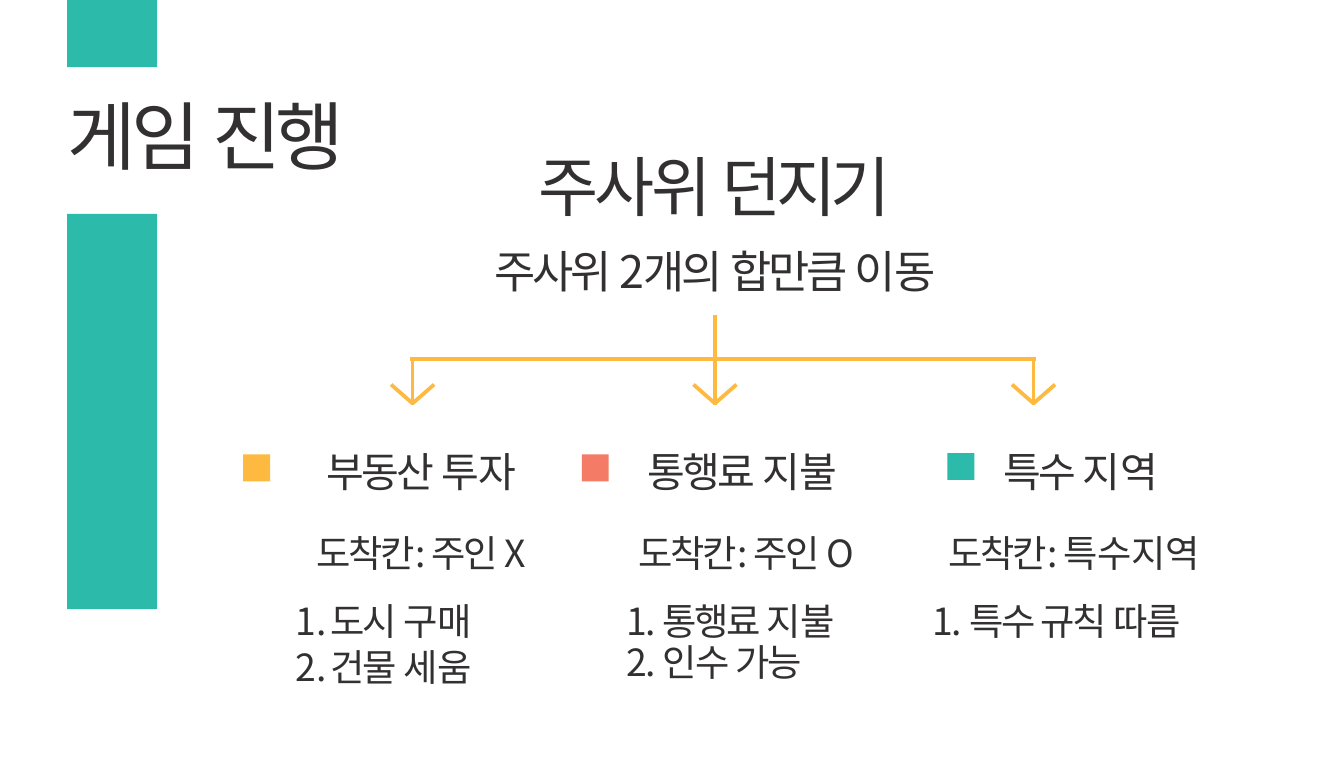
import pptx
import pptx.util
import pptx.dml.color
import pptx.enum.shapes
import pptx.enum.text
import pptx.oxml
import pptx.oxml.ns
from lxml import etree

Inches, Pt = pptx.util.Inches, pptx.util.Pt
ALIGN = pptx.enum.text.PP_ALIGN
FONT = "Noto Sans CJK KR"
TEAL, CORAL, GOLD, INK = "2CBBAB", "F47C67", "FDB940", "323031"

# Content: each run is (text, letter spacing in points)
TITLE = [("게임 ", -2.2), ("진행", -3.4)]
ROLL = [("주사위 ", -2.2), ("던지기", -3)]
MOVE = [("주사위 ", -1.6), ("2개의 ", -1.7), ("합만큼 ", -1.6), ("이동", -0.8)]
BUY_OUT = [("2. ", -0.8), ("인수 ", -1.1), ("가능", -1.3)]
LAND = ("도착칸: ", -1.3)
OWNER = ("주인 ", -1.1)

# Rows: each cell is (left indent, runs)
HEADS = [
    (0, [("부동산 ", -1.4), ("투자", -0.2)]),
    (0.1, [("통행료 ", -1.4), ("지불", -0.2)]),
    (0.29, [("특수 ", -1.3), ("지역", -0.2)]),
]
CASES = [
    (0, [LAND, OWNER, ("X", -0.5)]),
    (0.16, [LAND, OWNER, ("O", -0.5)]),
    (0.2, [LAND, ("특수지역", -0.2)]),
]
STEPS = [
    [("도시 ", -1.1), ("구매", -0.2)],
    [("건물 ", -1.1), ("세움", -0.2)],
]
RULES = [
    (0.42, [("1. ", -0.8), ("통행료 ", -1.4), ("지불", -0.2)]),
    (0.23, [("1. ", -0.8), ("특수 규칙 ", -1.1), ("따름", -0.5)]),
]
COLS, ROWS = [2.21, 2.47, 2.37], [0.52, 0.55, 0.78]
BARS = [(0.5, 0, 0.67, 0.5, TEAL), (0.5, 1.59, 0.67, 2.94, TEAL)]
MARKS = [(7.05, 3.37, 0.2, 0.2, TEAL), (4.33, 3.38, 0.2, 0.2, CORAL),
         (1.81, 3.38, 0.2, 0.2, GOLD)]
TIPS = [3.07, 5.32, 7.69]


def paint(target, code):
    target.rgb = pptx.dml.color.RGBColor.from_string(code)


def child(parent, tag, **attrs):
    return etree.SubElement(parent, pptx.oxml.ns.qn(tag), attrs)


def write(frame, runs, size=20, align=ALIGN.LEFT, before=0, left=0,
          hang=0, line=None, number=False, color=INK):
    para = frame.paragraphs[0]
    if para.runs:
        para = frame.add_paragraph()
    para.alignment = align
    para.space_before = Pt(before)
    if line:
        para.line_spacing = Pt(line)
    props = para._p.get_or_add_pPr()
    props.set("marL", str(Inches(left)))
    props.set("indent", str(Inches(hang)))
    if number:
        child(props, "a:buFont", typeface="+mj-lt")
        child(props, "a:buAutoNum", type="arabicPeriod")
        tabs = child(props, "a:tabLst")
        child(tabs, "a:tab", pos=str(Inches(left)), algn="l")
    for words, gap in runs:
        run = para.add_run()
        run.text = words
        run.font.size = Pt(size)
        run.font.name = FONT
        paint(run.font.color, color)
        look = run._r.get_or_add_rPr()
        look.set("spc", str(round(gap * 100)))
        child(look, "a:ea", typeface=FONT)


def setup(frame, top):
    frame.word_wrap = True
    frame.auto_size = pptx.enum.text.MSO_AUTO_SIZE.SHAPE_TO_FIT_TEXT
    frame.vertical_anchor = pptx.enum.text.MSO_ANCHOR.TOP
    frame.margin_left = frame.margin_right = frame.margin_bottom = 0
    frame.margin_top = Inches(top)
    return frame


def add_box(x, y, w, h, top):
    box = slide.shapes.add_textbox(*map(Inches, (x, y, w, h)))
    return setup(box.text_frame, top)


def add_block(x, y, w, h, color):
    kind = pptx.enum.shapes.MSO_SHAPE.RECTANGLE
    block = slide.shapes.add_shape(kind, *map(Inches, (x, y, w, h)))
    block.shadow.inherit = False
    block.fill.solid()
    paint(block.fill.fore_color, color)
    block.line.fill.background()


def add_line(*ends):
    kind = pptx.enum.shapes.MSO_CONNECTOR.STRAIGHT
    line = slide.shapes.add_connector(kind, *map(Inches, ends))
    paint(line.line.color, GOLD)
    line.line.width = Pt(2)
    child(line._element.spPr, "a:effectLst")


deck = pptx.Presentation()
deck.slide_width, deck.slide_height = Inches(10), Inches(5.63)
slide = deck.slides.add_slide(deck.slide_layouts[5])

# Title and side bars
title = slide.shapes.title
title.left, title.top = Inches(0.49), Inches(0.66)
title.width, title.height = Inches(3.35), Inches(0.69)
write(setup(title.text_frame, 0.01), TITLE, size=40, before=1, left=0.01)
for bar in BARS:
    add_block(*bar)

# Dice heading
dice = add_box(2.88, 0.88, 4.88, 1.35, 0.21)
write(dice, ROLL, size=35, align=ALIGN.CENTER, before=15.4)
write(dice, MOVE, size=24, align=ALIGN.CENTER, before=9.9)

# Second step of the toll column
write(add_box(4.65, 4.74, 1.4, 0.36, 0.01), BUY_OUT, before=1, left=0.01)

# Table of the three outcomes
spot = map(Inches, (2.03, 3.24, sum(COLS), sum(ROWS)))
table = slide.shapes.add_table(len(ROWS), len(COLS), *spot).table
table.first_row = table.horz_banding = False
for col, width in zip(table.columns, COLS):
    col.width = Inches(width)
for row, height, top in zip(table.rows, ROWS, (0.03, 0.14, 0.09)):
    row.height = Inches(height)
    for cell in row.cells:
        cell.fill.background()
        cell.margin_left = cell.margin_right = cell.margin_bottom = 0
        cell.margin_top = Inches(top)
for num, (cells, size, before) in enumerate([(HEADS, 22, 1.9), (CASES, 20, 10.1)]):
    for col, (left, runs) in enumerate(cells):
        write(table.cell(num, col).text_frame, runs, size=size,
              align=ALIGN.CENTER, before=before, left=left)
for runs, before, line in zip(STEPS, (6.6, 1), (None, 23.9)):
    write(table.cell(2, 0).text_frame, runs, before=before, left=0.43,
          hang=-0.26, line=line, number=True)
for col, (left, runs) in enumerate(RULES, 1):
    write(table.cell(2, col).text_frame, runs, before=6.6, left=left)

# Colour markers
for mark in MARKS:
    add_block(*mark)

# Branching arrows
add_line(3.05, 2.67, 7.71, 2.67)
add_line(TIPS[1], 2.34, TIPS[1], 2.69)
for x in TIPS:
    add_line(x, 2.66, x, 3.01)
    for side in (-0.16, 0.16):
        add_line(x + side, 2.86, x, 3)

deck.save("out.pptx")
